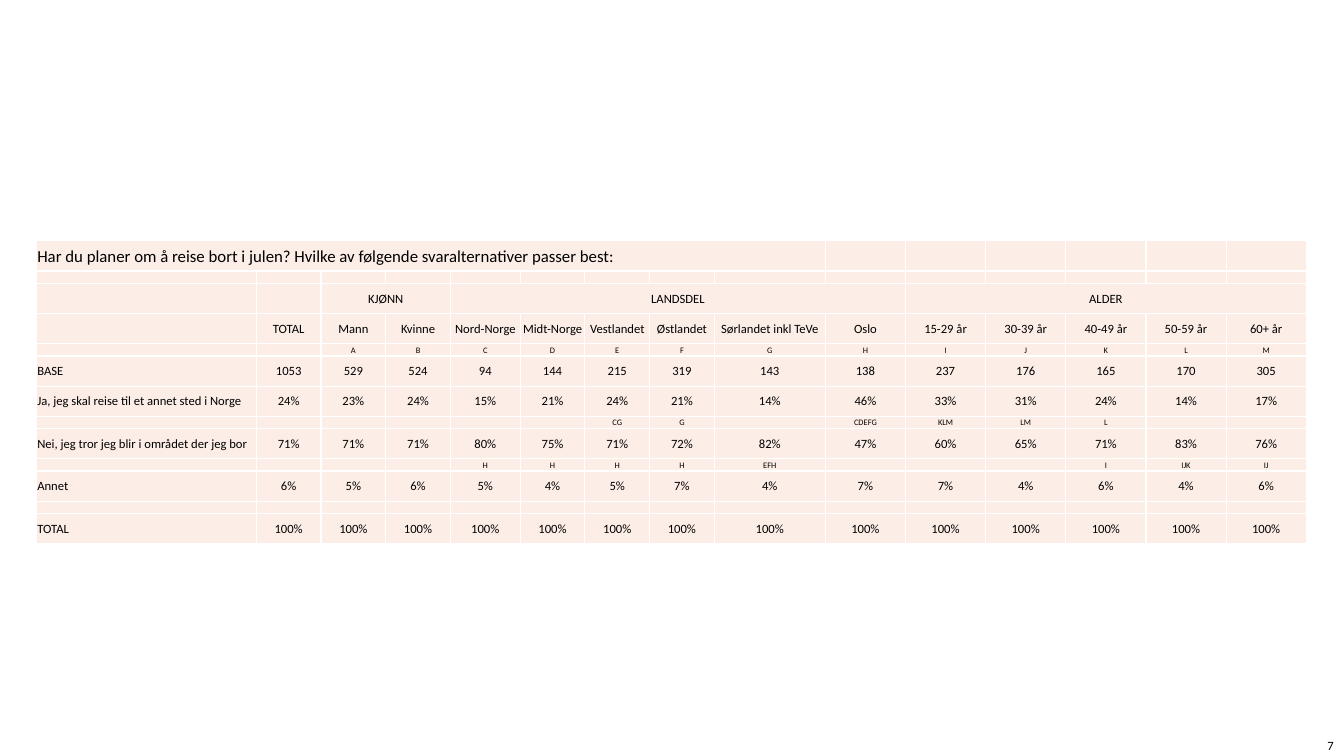
from lxml.etree import SubElement
from pptx import Presentation
from pptx.dml.color import RGBColor
from pptx.enum.text import MSO_ANCHOR as Anchor, PP_ALIGN as Align
from pptx.oxml.ns import qn
from pptx.util import Cm, Pt

FONT = "Calibri"
INK, PEACH, WHITE = "000000", "FCEEE7", "FFFFFF"
TITLE_SIZE, BODY_SIZE, MARK_SIZE = 12, 9, 6
TALL, LOW = 0.76, 0.31
COLUMN_WIDTHS = [5.54] + [1.63] * 3 + [1.76] + [1.63] * 3 + [2.8] + [2.02] * 6
COLUMN_COUNT = len(COLUMN_WIDTHS)

QUESTION = "Har du planer om å reise bort i julen? Hvilke av følgende svaralternativer passer best:"
GROUPS = [("KJØNN", 2, 2), ("LANDSDEL", 4, 6), ("ALDER", 10, 5)]
HEADERS = ["", "TOTAL", "Mann", "Kvinne", "Nord-Norge", "Midt-Norge", "Vestlandet",
           "Østlandet", "Sørlandet inkl TeVe", "Oslo", "15-29 år", "30-39 år",
           "40-49 år", "50-59 år", "60+ år"]
BASES = [1053, 529, 524, 94, 144, 215, 319, 143, 138, 237, 176, 165, 170, 305]
ANSWERS = [
    ("Ja, jeg skal reise til et annet sted i Norge",
     [24, 23, 24, 15, 21, 24, 21, 14, 46, 33, 31, 24, 14, 17],
     {6: "CG", 7: "G", 9: "CDEFG", 10: "KLM", 11: "LM", 12: "L"}),
    ("Nei, jeg tror jeg blir i området der jeg bor",
     [71, 71, 71, 80, 75, 71, 72, 82, 47, 60, 65, 71, 83, 76],
     {4: "H", 5: "H", 6: "H", 7: "H", 8: "EFH", 12: "I", 13: "IJK", 14: "IJ"}),
    ("Annet", [6, 5, 6, 5, 4, 5, 7, 4, 7, 7, 4, 6, 4, 6], {}),
]


def color(code):
    """Turn a hex string into a colour."""
    return RGBColor.from_string(code)


def place_text(para, text, size, align):
    """Write one formatted paragraph."""
    para.text = text
    para.alignment = align
    para.font.name = FONT
    para.font.size = Pt(size)
    para.font.color.rgb = color(INK)


def add_borders(cell):
    """Draw a thin white line on all four sides of a cell."""
    properties = cell._tc.get_or_add_tcPr()
    for side in ("a:lnL", "a:lnR", "a:lnT", "a:lnB"):
        line = SubElement(properties, qn(side), w=str(Pt(1)))
        fill = SubElement(line, qn("a:solidFill"))
        SubElement(fill, qn("a:srgbClr"), val=WHITE)


def fill_cell(cell, text, size, align):
    """Format one table cell and write its text."""
    add_borders(cell)
    cell.fill.solid()
    cell.fill.fore_color.rgb = color(PEACH)
    cell.vertical_anchor = Anchor.MIDDLE
    cell.margin_left = cell.margin_right = cell.margin_top = Cm(0.02)
    cell.margin_bottom = 0
    para = cell.text_frame.paragraphs[0]
    place_text(para, text, size, align)
    if not text:
        SubElement(para._p, qn("a:endParaRPr"), sz=str(size * 100))


def spread(entries):
    """Make a full row from texts keyed by column."""
    return [entries.get(column, "") for column in range(COLUMN_COUNT)]


def percent_row(label, values):
    """Make a row of percentages after its label."""
    return [label] + [f"{value}%" for value in values]


def build_rows():
    """List every table row as its texts, text size and height."""
    letters = {column: letter for column, letter in enumerate("ABCDEFGHIJKLM", 2)}
    rows = [
        (spread({0: QUESTION}), TITLE_SIZE, TALL),
        (spread({}), MARK_SIZE, LOW),
        (spread({column: name for name, column, _ in GROUPS}), BODY_SIZE, TALL),
        (HEADERS, BODY_SIZE, TALL),
        (spread(letters), MARK_SIZE, LOW),
        (["BASE"] + [str(base) for base in BASES], BODY_SIZE, TALL),
    ]
    for label, values, marks in ANSWERS:
        rows.append((percent_row(label, values), BODY_SIZE, TALL))
        rows.append((spread(marks), MARK_SIZE, LOW))
    rows.append((percent_row("TOTAL", [100] * len(BASES)), BODY_SIZE, TALL))
    return rows


def add_survey_table(page):
    """Add the table of answers by gender, region and age."""
    rows = build_rows()
    frame = page.shapes.add_table(len(rows), COLUMN_COUNT, Cm(0.92), Cm(6.07),
                                  Cm(sum(COLUMN_WIDTHS)),
                                  Cm(sum(height for _, _, height in rows)))
    table = frame.table
    table.first_row = table.horz_banding = False
    for column, width in zip(table.columns, COLUMN_WIDTHS):
        column.width = Cm(width)
    for row, (texts, size, height) in zip(table.rows, rows):
        row.height = Cm(height)
        for index, (cell, text) in enumerate(zip(row.cells, texts)):
            fill_cell(cell, text, size, Align.CENTER if index else Align.LEFT)
    table.cell(0, 0).merge(table.cell(0, 8))
    for _, start, count in GROUPS:
        table.cell(2, start).merge(table.cell(2, start + count - 1))


def add_page_number(page, number):
    """Add the page number in the bottom right corner."""
    box = page.shapes.add_textbox(Cm(32.89), Cm(18.52), Cm(0.97), Cm(0.53))
    box.text_frame.word_wrap = True
    box.text_frame.vertical_anchor = Anchor.MIDDLE
    place_text(box.text_frame.paragraphs[0], number, BODY_SIZE, Align.RIGHT)


def main():
    """Build and save the deck."""
    deck = Presentation()
    deck.slide_width, deck.slide_height = Cm(33.87), Cm(19.05)
    page = deck.slides.add_slide(deck.slide_layouts.get_by_name("Blank"))
    add_survey_table(page)
    add_page_number(page, "7")
    deck.save("out.pptx")


if __name__ == "__main__":
    main()
